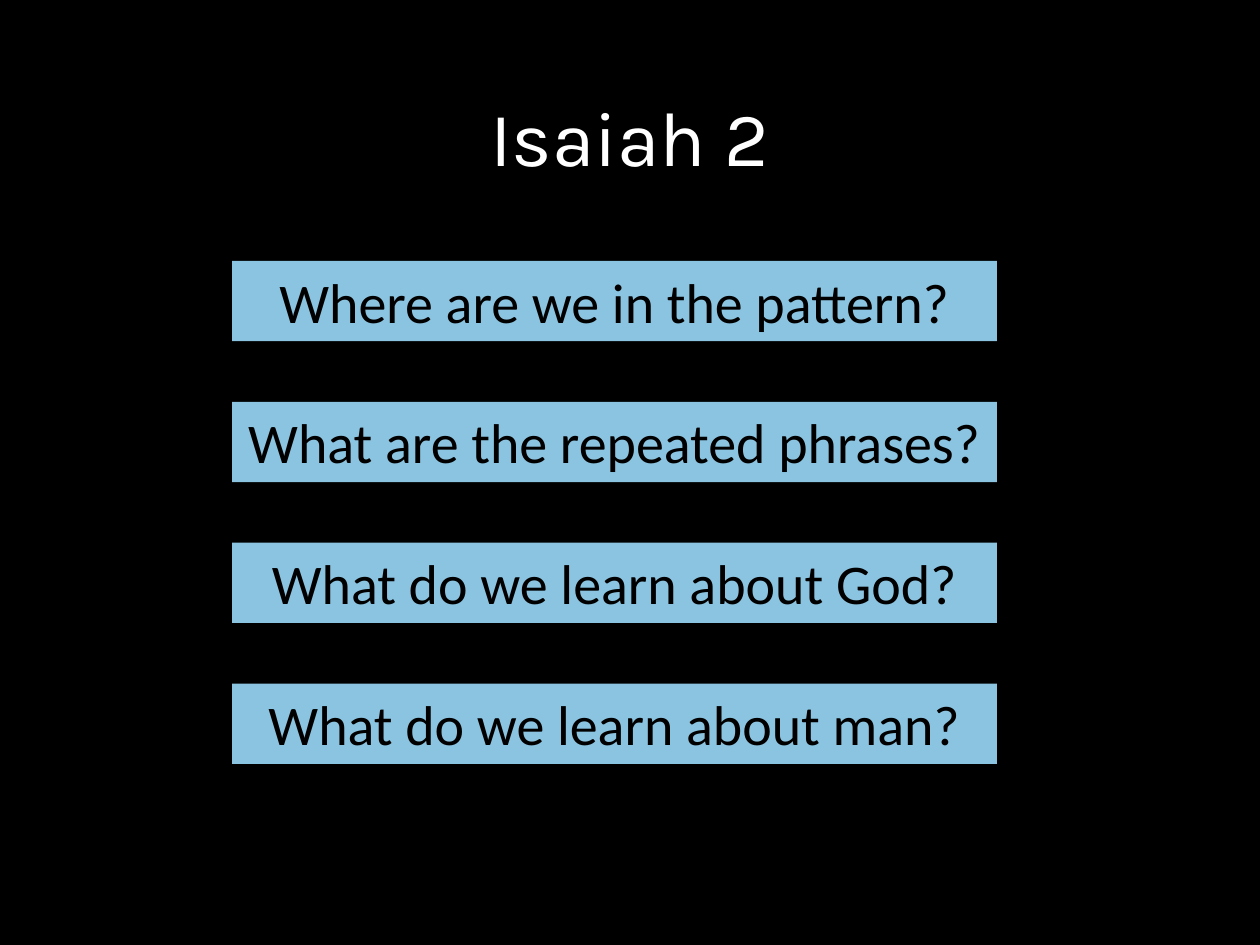
from pptx import Presentation
from pptx.dml.color import RGBColor
from pptx.enum.shapes import MSO_SHAPE
from pptx.enum.text import MSO_ANCHOR, MSO_AUTO_SIZE, PP_ALIGN
from pptx.util import Cm, Pt

BLACK = RGBColor(0x00, 0x00, 0x00)
WHITE = RGBColor(0xFF, 0xFF, 0xFF)
LIGHT_BLUE = RGBColor(0x8B, 0xC4, 0xE0)
RECTANGLE = MSO_SHAPE.RECTANGLE
CENTER = PP_ALIGN.CENTER
TOP = MSO_ANCHOR.TOP
MIDDLE = MSO_ANCHOR.MIDDLE
FIT_SHAPE = MSO_AUTO_SIZE.SHAPE_TO_FIT_TEXT
NO_FIT = MSO_AUTO_SIZE.NONE

QUESTIONS = [
    "Where are we in the pattern?",
    "What are the repeated phrases?",
    "What do we learn about God?",
    "What do we learn about man?",
]
FIRST_TOP = 5.26
ROW_STEP = 2.84


def write_text(frame, text, font_name, size, color, anchor, auto_size):
    frame.word_wrap = True
    frame.auto_size = auto_size
    frame.vertical_anchor = anchor
    para = frame.paragraphs[0]
    para.alignment = CENTER
    span = para.add_run()
    span.text = text
    span.font.name = font_name
    span.font.size = Pt(size)
    span.font.color.rgb = color
    return para


def add_title(page, text):
    title = page.shapes.title
    title.left, title.top = Cm(1.75), Cm(1.01)
    title.width, title.height = Cm(21.9), Cm(3.68)
    para = write_text(title.text_frame, text, "Karla", 44, WHITE, MIDDLE, NO_FIT)
    para.line_spacing = 0.9


def add_question(page, text, top):
    box = page.shapes.add_shape(RECTANGLE, Cm(4.68), Cm(top), Cm(15.42), Cm(1.62))
    box.shadow.inherit = False
    box.fill.solid()
    box.fill.fore_color.rgb = LIGHT_BLUE
    box.line.fill.background()
    write_text(box.text_frame, text, "Calibri", 32, BLACK, TOP, FIT_SHAPE)


def main():
    deck = Presentation()
    deck.slide_width, deck.slide_height = Cm(25.4), Cm(19.05)
    page = deck.slides.add_slide(deck.slide_layouts[5])
    page.background.fill.solid()
    page.background.fill.fore_color.rgb = BLACK
    add_title(page, "Isaiah 2")
    for row, question in enumerate(QUESTIONS):
        add_question(page, question, FIRST_TOP + row * ROW_STEP)
    deck.save("out.pptx")


if __name__ == "__main__":
    main()
